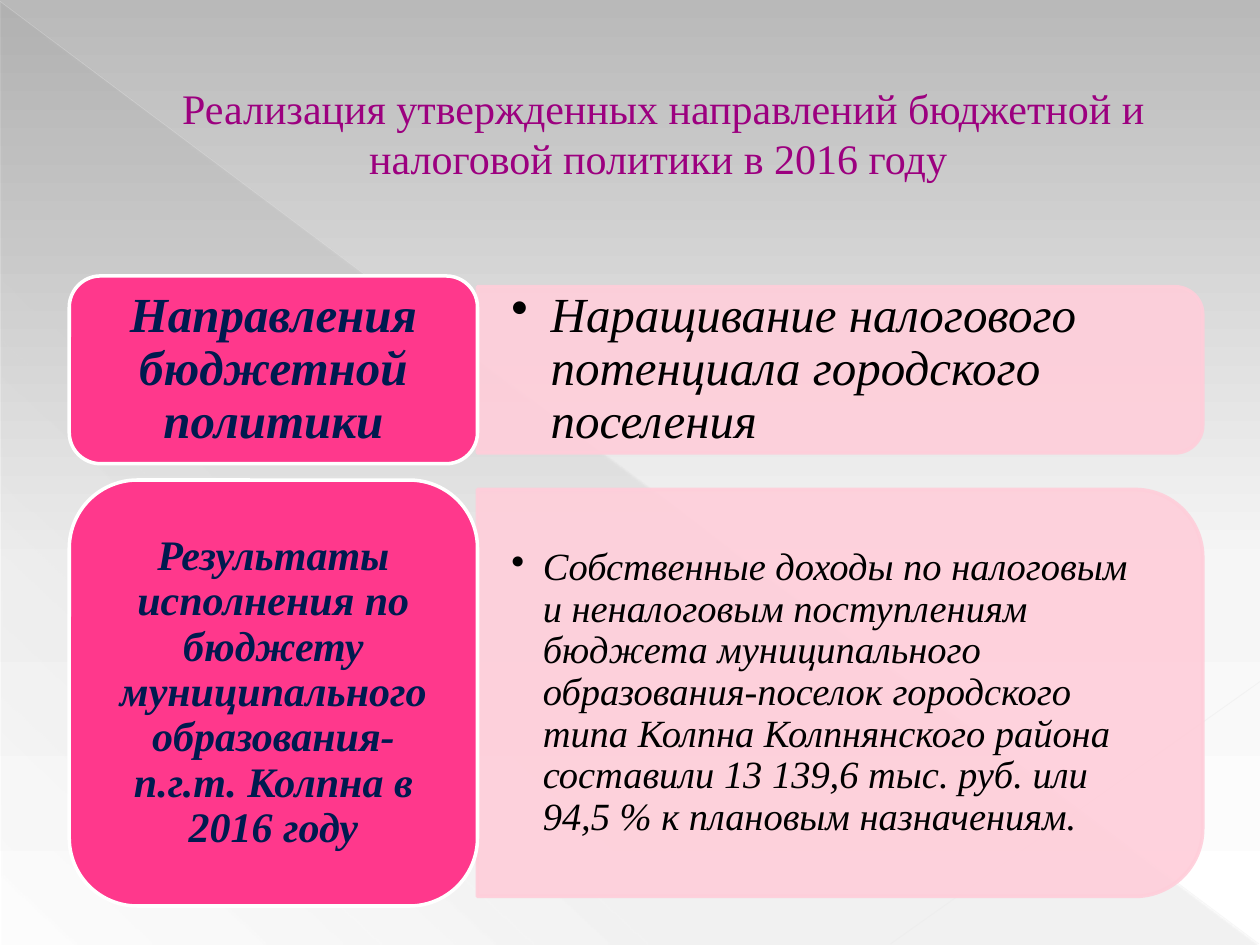
from lxml import etree
from pptx import Presentation
from pptx.dml.color import RGBColor
from pptx.enum.shapes import MSO_CONNECTOR, MSO_SHAPE
from pptx.enum.text import MSO_ANCHOR, PP_ALIGN
from pptx.oxml.ns import qn
from pptx.util import Pt

LINE = MSO_CONNECTOR.STRAIGHT
TRI = MSO_SHAPE.RIGHT_TRIANGLE
ROUND = MSO_SHAPE.ROUNDED_RECTANGLE
TAB = MSO_SHAPE.ROUND_2_SAME_RECTANGLE
MID = MSO_ANCHOR.MIDDLE
LEFT, CENTER = PP_ALIGN.LEFT, PP_ALIGN.CENTER

FONT = "Times New Roman"
COLORS = {
    "title": "9C007F", "pink": "FF388C", "pale": "FFCEDA", "navy": "001A4F",
    "black": "000000", "white": "FFFFFF", "top": "B9B9B9", "mist": "F6F6F6",
    "shade": "666666", "edge": "E8E8E8", "ray": "EAEAEA",
}
LABEL_X, LABEL_W = 39.6, 233.3
BAR_X, BAR_W = 272.8, 414.5

ROWS = [
    dict(top=157.7, high=107.3, bar=95, size=28, pad=(8.6, 4.3),
         label="Направления бюджетной политики",
         text="Наращивание налогового потенциала городского поселения",
         note=28, wide=410.4, tall=85.7, hang=22.5),
    dict(top=274.3, high=243.4, bar=232.6, size=24, pad=(7.2, 3.6),
         label="Результаты исполнения по бюджету муниципального "
               "образования-п.г.т. Колпна в 2016 году",
         text="Собственные доходы по налоговым и неналоговым поступлениям "
              "бюджета муниципального образования-поселок городского типа "
              "Колпна Колпнянского района составили 13 139,6 тыс. руб. или "
              "94,5 % к плановым назначениям.",
         note=22, wide=403.2, tall=209.5, hang=18),
]


def rgb(name):
    return RGBColor.from_string(COLORS[name])


def sub(node, tag, **attrs):
    return etree.SubElement(node, qn(tag), {k: str(v) for k, v in attrs.items()})


def fade(root, alpha):
    """Set the opacity, in percent, of every plain colour under root."""
    for clr in root.xpath(".//a:solidFill/a:srgbClr"):
        sub(clr, "a:alpha", val=alpha * 1000)


def blend(fill, root, stops, angle):
    """Fill with stops of (place, colour, opacity), turned clockwise."""
    fill.gradient()
    grad = root.xpath(".//a:gradFill")[0]
    for child in list(grad):
        grad.remove(child)
    group = sub(grad, "a:gsLst")
    for pos, name, alpha in stops:
        stop = sub(group, "a:gs", pos=pos * 1000)
        clr = sub(stop, "a:srgbClr", val=COLORS[name])
        sub(clr, "a:alpha", val=alpha * 1000)
    sub(grad, "a:lin", ang=angle * 60000, scaled=0)


def add_line(slide, ends, color, width, alpha):
    line = slide.shapes.add_connector(LINE, *map(Pt, ends))
    line.line.color.rgb = rgb(color)
    line.line.width = Pt(width)
    fade(line.element.spPr, alpha)
    sub(line.element.spPr, "a:effectLst")


def add_box(slide, kind, box, fill, edge):
    shape = slide.shapes.add_shape(kind, *map(Pt, box))
    shape.shadow.inherit = False
    shape.fill.solid()
    shape.fill.fore_color.rgb = rgb(fill)
    shape.line.color.rgb = rgb(edge)
    shape.line.width = Pt(2)
    return shape


def add_bar(slide, x, mid, wide, high):
    """Draw a bar rounded on the right: a tab given a quarter turn."""
    box = (x + (wide - high) / 2, mid - wide / 2, high, wide)
    bar = add_box(slide, TAB, box, "pale", "pale")
    bar.rotation = 90
    fade(bar.element.spPr, 90)


def write(shape, text, size, color, pad=(7.2, 3.6), align=CENTER, bold=False,
          italic=True, space=0.9, indent=0, bullet=False):
    frame = shape.text_frame
    frame.word_wrap = True
    frame.vertical_anchor = MID
    frame.margin_left = frame.margin_right = Pt(pad[0])
    frame.margin_top = frame.margin_bottom = Pt(pad[1])
    para = frame.paragraphs[0]
    para.alignment = align
    para.line_spacing = space
    props = para._p.get_or_add_pPr()
    props.set("marL", str(Pt(indent)))
    if bullet:
        props.set("indent", str(-Pt(indent)))
        sub(props, "a:buChar", char="•")
    run = para.add_run()
    run.text = text
    font = run.font
    font.name, font.size = FONT, Pt(size)
    font.bold, font.italic = bold, italic
    font.color.rgb = rgb(color)


def add_text(slide, box, text, **style):
    write(slide.shapes.add_textbox(*map(Pt, box)), text, **style)


def add_back(slide):
    blend(slide.background.fill, slide.element,
          [(0, "top", 100), (60, "mist", 100), (100, "white", 100)], 90)
    tri = slide.shapes.add_shape(TRI, Pt(0.7), Pt(1.4), Pt(718.6), Pt(538.6))
    tri.shadow.inherit = False
    tri.line.fill.background()
    blend(tri.fill, tri.element,
          [(0, "shade", 10), (70, "shade", 8), (100, "shade", 1)], 133)
    add_line(slide, (0, 0.7, 719.3, 539.3), "edge", 0.39, 35)
    add_line(slide, (720, 389.5, 509, 539.3), "ray", 0.47, 45)


def add_row(slide, row):
    mid = row["top"] + row["high"] / 2
    add_bar(slide, BAR_X, mid, BAR_W, row["bar"])
    add_text(slide, (BAR_X, mid - row["tall"] / 2, row["wide"], row["tall"]),
             row["text"], size=row["note"], color="black", pad=(19.4, 10),
             align=LEFT, indent=row["hang"], bullet=True)
    label = add_box(slide, ROUND, (LABEL_X, row["top"], LABEL_W, row["high"]),
                    "pink", "white")
    write(label, row["label"], row["size"], "navy", pad=row["pad"], bold=True)


def main():
    deck = Presentation()
    deck.slide_width, deck.slide_height = Pt(720), Pt(540)
    slide = deck.slides.add_slide(deck.slide_layouts[6])
    add_back(slide)
    add_text(slide, (36, 20.9, 648, 110.2),
             "Реализация утвержденных направлений бюджетной и налоговой "
             "политики в 2016 году ",
             size=24, color="title", italic=False, space=1.0, indent=38.2)
    for row in ROWS:
        add_row(slide, row)
    deck.save("out.pptx")


if __name__ == "__main__":
    main()
